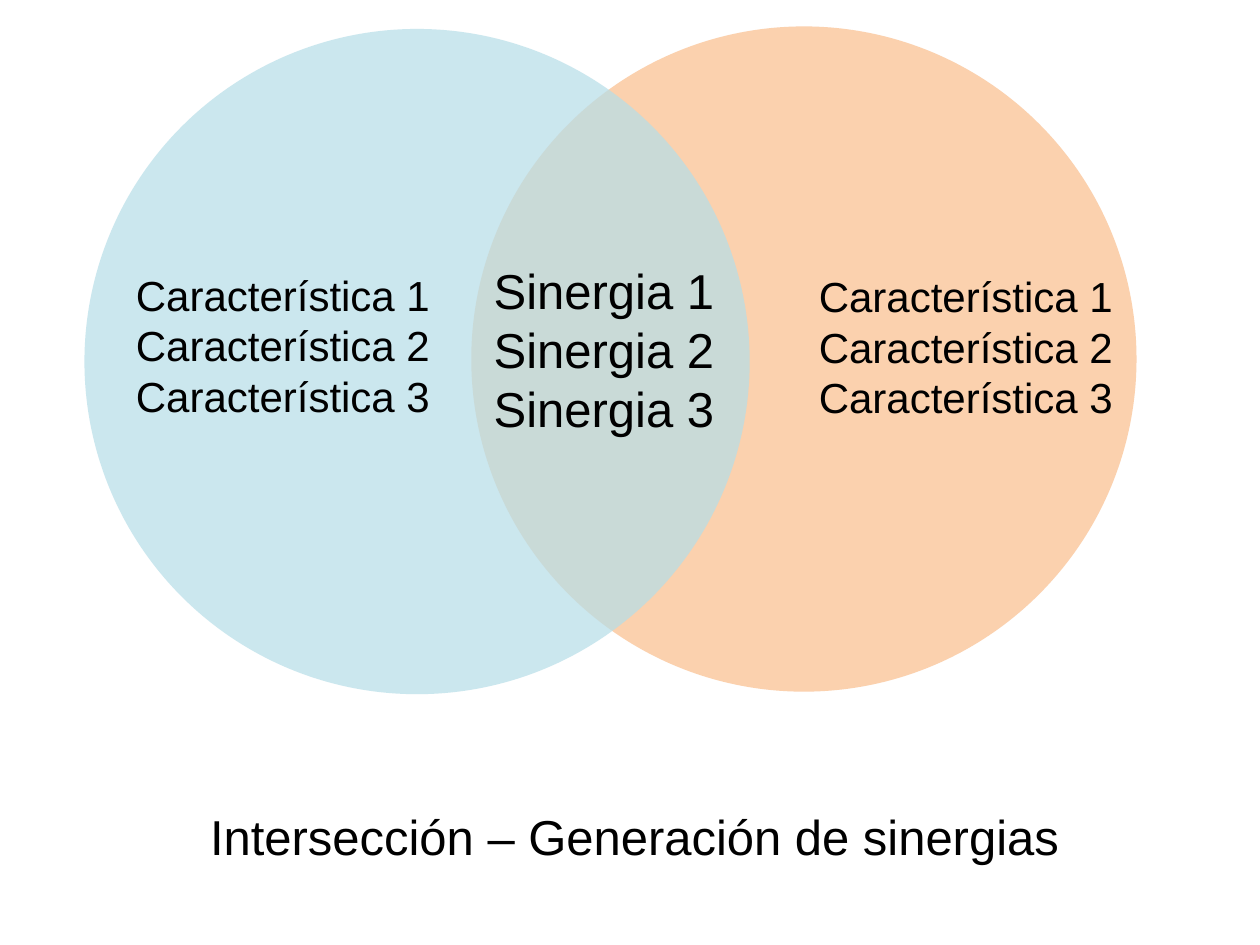
from lxml.etree import SubElement
from pptx import Presentation
from pptx.dml.color import RGBColor
from pptx.enum.shapes import MSO_SHAPE
from pptx.enum.text import MSO_ANCHOR, MSO_AUTO_SIZE, PP_ALIGN
from pptx.oxml.ns import qn
from pptx.util import Inches, Pt

BLUE = RGBColor(0xB7, 0xDE, 0xE8)
ORANGE = RGBColor(0xFA, 0xC0, 0x90)
BLACK = RGBColor(0x00, 0x00, 0x00)
FONT = "Arial"
OPACITY = 72
DIAMETER = 5.28


def format_text(tf, size, align=PP_ALIGN.LEFT):
    """Give every paragraph the slide's font at one size and alignment."""
    for p in tf.paragraphs:
        p.alignment = align
        for r in p.runs:
            r.font.name = FONT
            r.font.size = Pt(size)
            r.font.color.rgb = BLACK


def add_circle(s, left, top, color):
    """Draw one translucent circle of the Venn diagram."""
    sp = s.shapes.add_shape(MSO_SHAPE.OVAL, Inches(left), Inches(top),
                            Inches(DIAMETER), Inches(DIAMETER))
    sp.shadow.inherit = False
    sp.fill.solid()
    sp.fill.fore_color.rgb = color
    sp.line.fill.background()
    rgb = sp.fill._xPr.find(qn("a:solidFill")).find(qn("a:srgbClr"))
    SubElement(rgb, qn("a:alpha"), val=str(OPACITY * 1000))


def add_list(s, box, word, size):
    """Place three numbered lines of a word in the given box."""
    sp = s.shapes.add_textbox(*(Inches(v) for v in box))
    tf = sp.text_frame
    tf.text = "\n".join(f"{word} {n}" for n in range(1, 4))
    tf.word_wrap = False
    tf.auto_size = MSO_AUTO_SIZE.SHAPE_TO_FIT_TEXT
    format_text(tf, size)


def add_venn(s, left, top):
    """Build the two overlapping circles and their lists from a corner."""
    add_circle(s, left + 3.07, top, ORANGE)
    add_circle(s, left, top + 0.02, BLUE)
    add_list(s, (left + 0.31, top + 1.88, 2.54, 1.31), "Característica", 24)
    add_list(s, (left + 3.15, top + 1.81, 1.97, 1.51), "Sinergia", 28)
    add_list(s, (left + 5.73, top + 1.89, 2.54, 1.31), "Característica", 24)


def set_title(s, box, text):
    """Move the title placeholder to the box and fill it."""
    sp = s.shapes.title
    sp.left, sp.top, sp.width, sp.height = (Inches(v) for v in box)
    tf = sp.text_frame
    tf.text = text
    tf.word_wrap = True
    tf.auto_size = MSO_AUTO_SIZE.NONE
    tf.vertical_anchor = MSO_ANCHOR.TOP
    format_text(tf, 28, PP_ALIGN.CENTER)


def main():
    """Build and save the slide."""
    prs = Presentation()
    prs.slide_width, prs.slide_height = Inches(10), Inches(7.5)
    s = prs.slides.add_slide(prs.slide_layouts[5])
    add_venn(s, 0.67, 0.21)
    set_title(s, (0.35, 6.35, 9.37, 0.57), "Intersección – Generación de sinergias")
    prs.save("out.pptx")


if __name__ == "__main__":
    main()
